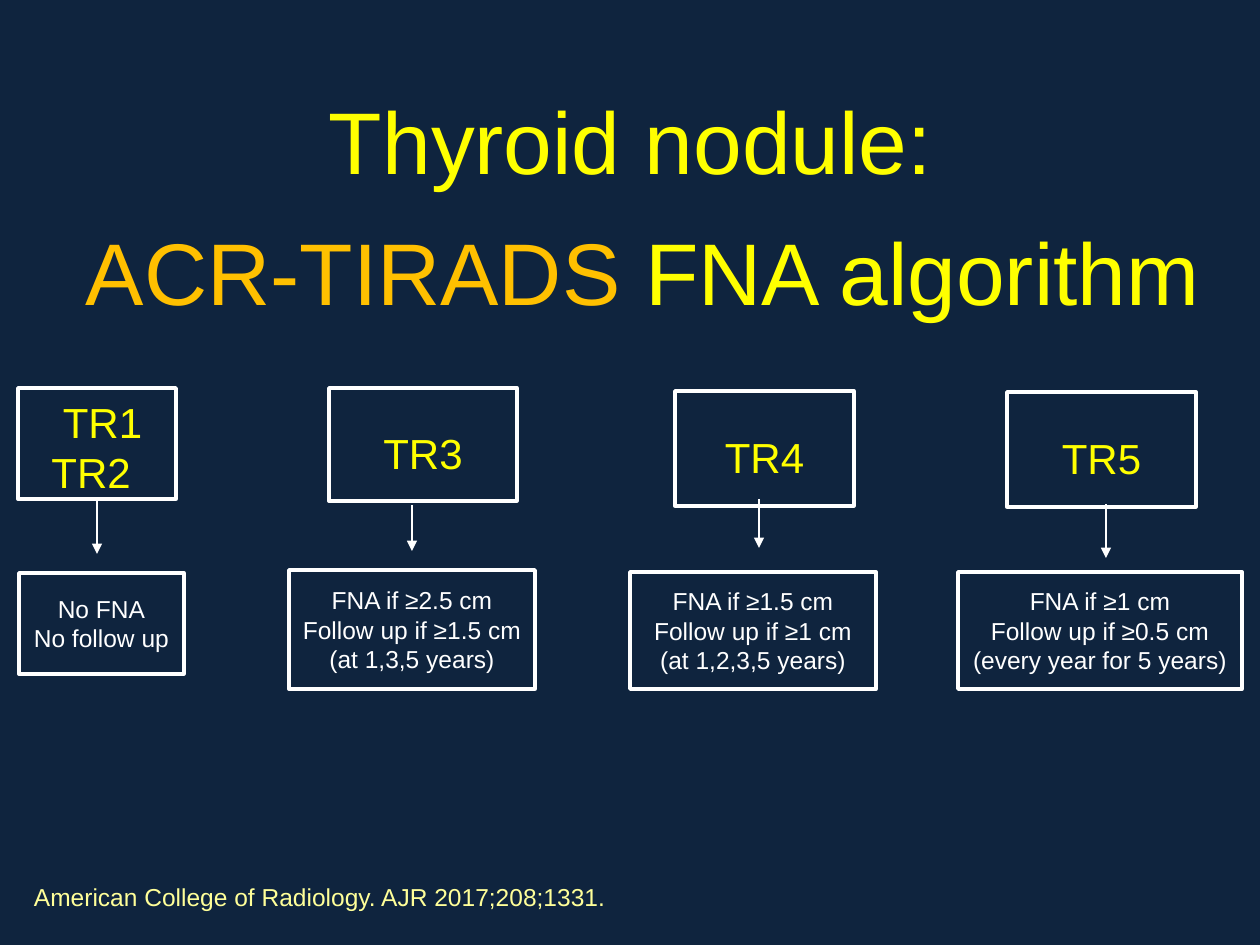
from dataclasses import dataclass

from lxml import etree
from pptx import Presentation
from pptx.dml.color import RGBColor
from pptx.enum.shapes import MSO_CONNECTOR, MSO_SHAPE
from pptx.enum.text import MSO_ANCHOR, PP_ALIGN
from pptx.oxml.ns import qn
from pptx.util import Emu, Pt

PX = 914400 / 126
RECTANGLE = MSO_SHAPE.RECTANGLE
STRAIGHT = MSO_CONNECTOR.STRAIGHT
TOP, MIDDLE = MSO_ANCHOR.TOP, MSO_ANCHOR.MIDDLE
LEFT, CENTER = PP_ALIGN.LEFT, PP_ALIGN.CENTER
BOTTOM_SIDE = 2


@dataclass(frozen=True)
class Theme:
    """Colours, font and sizes in points."""
    background: str = "0F243E"
    outline: str = "FFFFFF"
    body: str = "FFFFFF"
    heading: str = "FFFF00"
    accent: str = "FFC000"
    citation: str = "FFFF99"
    font: str = "Arial"
    title_size: int = 50
    level_size: int = 24
    body_size: int = 14
    box_line: float = 2
    arrow_line: float = 0.75


THEME = Theme()

TITLE = [
    [("Thyroid nodule: ", THEME.heading)],
    [("ACR-TIRADS", THEME.accent), (" FNA algorithm", THEME.heading)],
]
CITATION = "American College of Radiology. AJR 2017;208;1331."

# Each branch: level lines, level box, top inset, arrow (x, start, end), outcome lines, outcome box
BRANCHES = [
    ([" TR1", "TR2 "], (18, 388, 158, 111), 6, (97, 499, 554),
     ["No FNA", "No follow up"], (19, 573, 165, 101)),
    (["TR3"], (329, 388, 188, 113), 16, (412, 505, 551),
     ["FNA if ≥2.5 cm", "Follow up if ≥1.5 cm", "(at 1,3,5 years)"], (289, 570, 246, 119)),
    (["TR4"], (675, 391, 179, 115), 16, (759, 499, 548),
     ["FNA if ≥1.5 cm", "Follow up if ≥1 cm", "(at 1,2,3,5 years)"], (630, 572, 246, 117)),
    (["TR5"], (1007, 392, 189, 115), 16, (1106, 504, 558),
     ["FNA if ≥1 cm", "Follow up if ≥0.5 cm", "(every year for 5 years)"], (958, 572, 284, 117)),
]


def px(*lengths):
    """Turn whole pixels into EMU."""
    return [Emu(round(length * PX)) for length in lengths]


def apply(target, formats):
    """Set each attribute named in formats."""
    for name, value in formats.items():
        setattr(target, name, value)


def write(box, lines, size, align, anchor, insets, spacing=1.0):
    """Fill a box with lines made of (text, colour) spans."""
    left, top, right, bottom = px(*insets)
    frame = box.text_frame
    apply(frame, {"word_wrap": True, "vertical_anchor": anchor, "margin_left": left,
                  "margin_top": top, "margin_right": right, "margin_bottom": bottom})
    for index, line in enumerate(lines):
        para = frame.add_paragraph() if index else frame.paragraphs[0]
        apply(para, {"alignment": align, "line_spacing": spacing})
        for text, color in line:
            span = para.add_run()
            span.text = text
            apply(span.font, {"name": THEME.font, "size": Pt(size)})
            span.font.color.rgb = RGBColor.from_string(color)


def add_text(page, bounds, *text_format):
    """Add a plain text box."""
    write(page.shapes.add_textbox(*px(*bounds)), *text_format)


def add_box(page, bounds, lines, size, color, top_inset):
    """Add an outlined rectangle with centred text."""
    box = page.shapes.add_shape(RECTANGLE, *px(*bounds))
    box.shadow.inherit = False
    box.fill.background()
    box.line.color.rgb = RGBColor.from_string(THEME.outline)
    box.line.width = Pt(THEME.box_line)
    spans = [[(line, color)] for line in lines]
    write(box, spans, size, CENTER, MIDDLE, (8, top_inset, 8, 0))
    return box


def add_arrow(page, x, start, end, box, bounds):
    """Add a downward arrow, joined to the box if it starts at its bottom middle."""
    arrow = page.shapes.add_connector(STRAIGHT, *px(x, start, x, end))
    left, top, width, height = bounds
    if (x, start) == (left + width // 2, top + height):
        arrow.begin_connect(box, BOTTOM_SIDE)
    arrow.line.color.rgb = RGBColor.from_string(THEME.outline)
    arrow.line.width = Pt(THEME.arrow_line)
    etree.SubElement(arrow.line._get_or_add_ln(), qn("a:tailEnd"), type="triangle")
    etree.SubElement(arrow._element.spPr, qn("a:effectLst"))


def add_branch(page, levels, level_bounds, inset, arrow, outcomes, outcome_bounds):
    """Add a level box, its arrow and its outcome box."""
    box = add_box(page, level_bounds, levels, THEME.level_size, THEME.heading, inset)
    add_arrow(page, *arrow, box, level_bounds)
    add_box(page, outcome_bounds, outcomes, THEME.body_size, THEME.body, 0)


def main():
    """Build the slide and save the deck."""
    deck = Presentation()
    deck.slide_width, deck.slide_height = px(1260, 945)
    page = deck.slides.add_slide(deck.slide_layouts[6])
    page.background.fill.solid()
    page.background.fill.fore_color.rgb = RGBColor.from_string(THEME.background)

    add_text(page, (26, 61, 1234, 226), TITLE, THEME.title_size, CENTER, TOP, (0, 0, 0, 0), 1.25)
    for branch in BRANCHES:
        add_branch(page, *branch)
    add_text(page, (21, 876, 1022, 43), [[(CITATION, THEME.citation)]],
             THEME.body_size, LEFT, TOP, (13, 6, 13, 6))
    deck.save("out.pptx")


if __name__ == "__main__":
    main()
